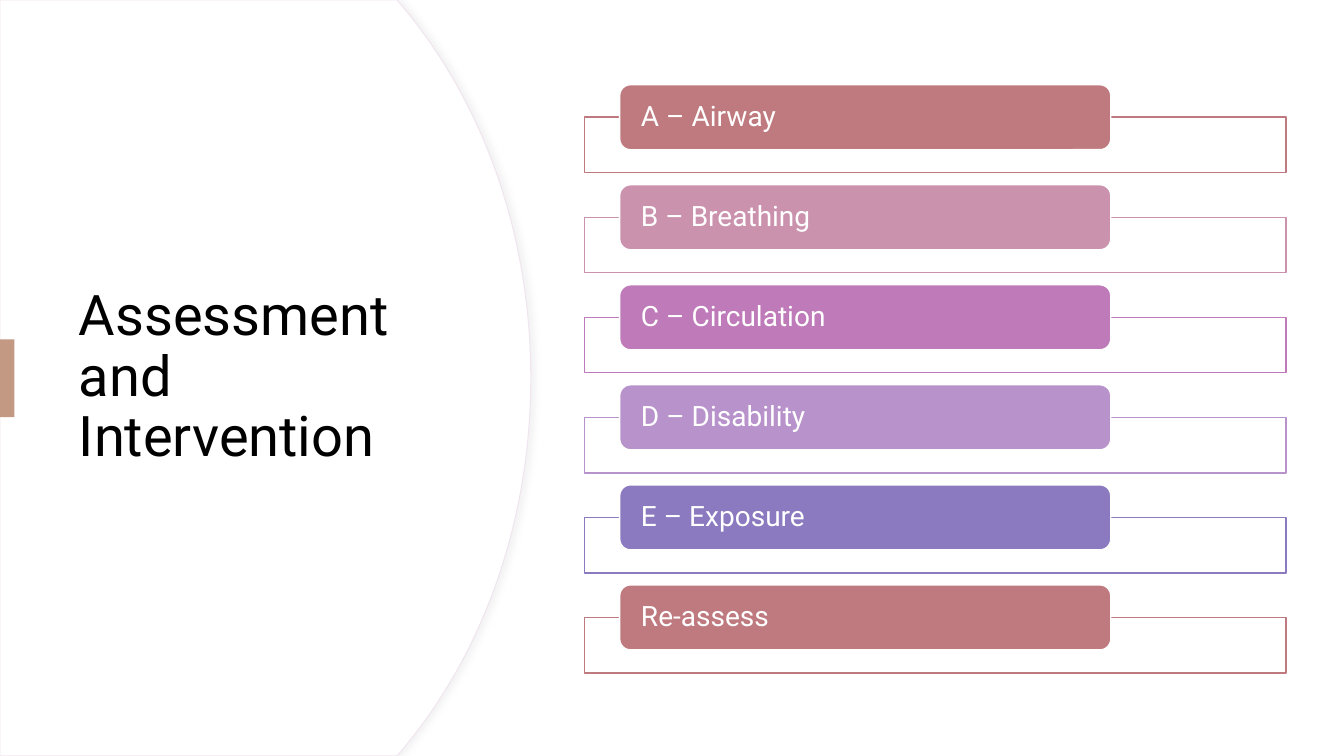
from dataclasses import dataclass

from lxml import etree
from pptx import Presentation
from pptx import util as u
from pptx.dml.color import RGBColor
from pptx.enum import shapes, text
from pptx.oxml.ns import qn


@dataclass(frozen=True)
class Theme:
    font: str = "Roboto"
    head: int = 40
    body: int = 20
    white: str = "FFFFFF"
    black: str = "000000"
    edge: str = "F0E5EF"
    shade: str = "D9D9D9"
    tab: str = "C39983"
    hues: tuple = ("BF7A7F", "CB92AE", "BF7AB9", "B892CB", "8B7ABF")


T = Theme()
WIDE, HIGH = 13.33, 7.5
STEPS = ("A – Airway", "B – Breathing", "C – Circulation",
         "D – Disability", "E – Exposure", "Re-assess")


def paint(shape, fill, line=None, width=1):
    """Give a shape its fill and outline, without a shadow."""
    shape.shadow.inherit = False
    if fill:
        shape.fill.solid()
        shape.fill.fore_color.rgb = RGBColor.from_string(fill)
    else:
        shape.fill.background()
    if line:
        shape.line.color.rgb = RGBColor.from_string(line)
        shape.line.width = u.Pt(width)
    else:
        shape.line.fill.background()


def block(slide, kind, box, fill, line=None):
    shape = slide.shapes.add_shape(kind, *map(u.Inches, box))
    paint(shape, fill, line)
    return shape


def write(shape, words, size, hue, inset):
    """Put one left-aligned paragraph in the middle of a shape."""
    frame = shape.text_frame
    frame.word_wrap = True
    frame.vertical_anchor = text.MSO_ANCHOR.MIDDLE
    frame.margin_left = frame.margin_right = u.Inches(inset)
    frame.margin_top = frame.margin_bottom = 0
    para = frame.paragraphs[0]
    para.alignment = text.PP_ALIGN.LEFT
    para.line_spacing = 0.9
    run = para.add_run()
    run.text = words
    run.font.name = T.font
    run.font.size = u.Pt(size)
    run.font.color.rgb = RGBColor.from_string(hue)


def cast(shape):
    """Add a faint shadow to the right."""
    glow = shape._element.spPr.find(qn("a:effectLst"))
    outer = etree.SubElement(glow, qn("a:outerShdw"), blurRad=str(u.Pt(4)),
                             dist=str(u.Pt(3)), dir="0", algn="l", rotWithShape="0")
    tint = etree.SubElement(outer, qn("a:srgbClr"), val=T.shade)
    etree.SubElement(tint, qn("a:alpha"), val="30000")


def curve(box, count=40):
    """Points of the bulging right edge, from top to bottom."""
    left, top, width, height = box
    knots = ((0.76, 0.01), (0.91, 0.136), (1, 0.31), (1, 0.5))
    half = []
    for i in range(count + 1):
        t = i / count
        parts = ((1 - t) ** 3, 3 * t * (1 - t) ** 2, 3 * t * t * (1 - t), t ** 3)
        half.append([sum(p * k[axis] for p, k in zip(parts, knots)) for axis in (0, 1)])
    edge = [(0.748, 0)] + half
    edge += [(x, 1 - y) for x, y in reversed(edge[:-1])]
    return [(u.Inches(left + x * width), u.Inches(top + y * height)) for x, y in edge]


def panel(slide, box):
    """Curved title panel with its accent tab."""
    left, top, width, height = box
    # Curved background
    pen = slide.shapes.build_freeform(u.Inches(left), u.Inches(top))
    pen.add_line_segments(curve(box) + [(u.Inches(left), u.Inches(top + height))])
    back = pen.convert_to_shape()
    paint(back, T.white, T.edge, 0.75)
    cast(back)
    # Title
    area = (left + 0.13 * width, top + 0.17 * height, 0.748 * width, 0.66 * height)
    title = slide.shapes.add_textbox(*map(u.Inches, area))
    write(title, "Assessment and Intervention", T.head, T.black, 0.1)
    # Accent tab
    tab = (left, top + 0.449 * height, 0.027 * width, 0.103 * height)
    block(slide, shapes.MSO_SHAPE.RECTANGLE, tab, T.tab)


def steps(slide, box):
    """Equal rows, each a coloured label over an outlined frame."""
    left, top, width, height = box
    row = height / len(STEPS)
    for i, words in enumerate(STEPS):
        hue = T.hues[i % len(T.hues)]
        y = top + i * row
        frame = (left, y + 0.325 * row, width, 0.555 * row)
        block(slide, shapes.MSO_SHAPE.RECTANGLE, frame, T.white, hue)
        label = (left + 0.05 * width, y, 0.7 * width, 0.65 * row)
        pill = block(slide, shapes.MSO_SHAPE.ROUNDED_RECTANGLE, label, hue, T.white)
        write(pill, words, T.body, T.white, 0.18)


def main():
    deck = Presentation()
    deck.slide_width, deck.slide_height = u.Inches(WIDE), u.Inches(HIGH)
    slide = deck.slides.add_slide(deck.slide_layouts[6])
    panel(slide, (0, 0, 0.395 * WIDE, HIGH))
    steps(slide, (0.435 * WIDE, 0.112 * HIGH, 0.522 * WIDE, 0.794 * HIGH))
    deck.save("out.pptx")


if __name__ == "__main__":
    main()
